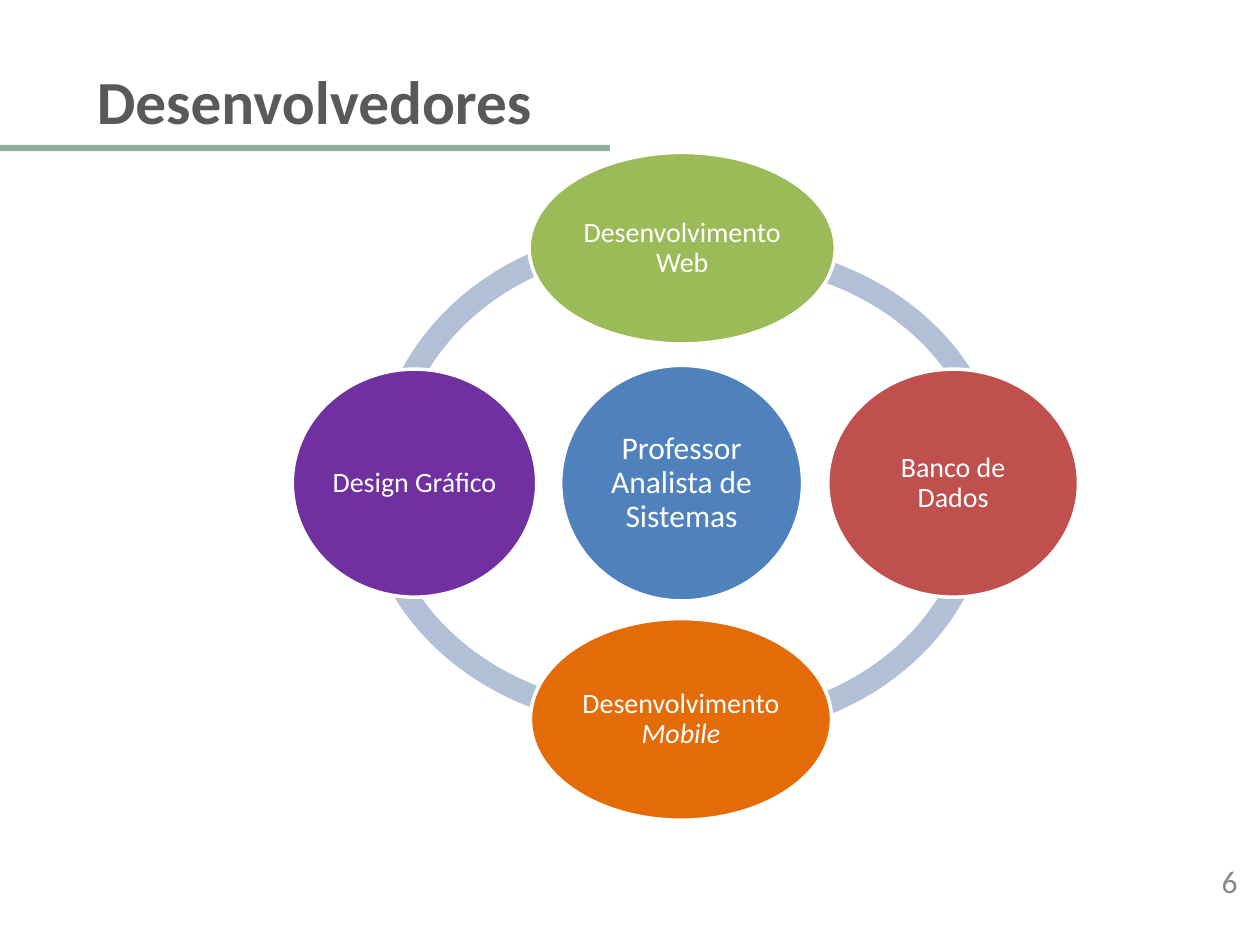
from lxml import etree
from pptx import Presentation
from pptx.dml.color import RGBColor
from pptx.enum.shapes import MSO_SHAPE
from pptx.enum.text import MSO_ANCHOR, PP_ALIGN
from pptx.oxml.ns import qn
from pptx.util import Inches, Pt

RECT, OVAL, ARC = MSO_SHAPE.RECTANGLE, MSO_SHAPE.OVAL, MSO_SHAPE.BLOCK_ARC
MIDDLE = MSO_ANCHOR.MIDDLE
LEFT, CENTER, RIGHT = PP_ALIGN.LEFT, PP_ALIGN.CENTER, PP_ALIGN.RIGHT

FONT = "Calibri"
WHITE = RGBColor(0xFF, 0xFF, 0xFF)
DARK_GRAY = RGBColor(0x59, 0x59, 0x59)
GRAY = RGBColor(0x88, 0x88, 0x88)
DARK_GREEN = RGBColor(0x18, 0x56, 0x3A)
RING = RGBColor(0xB1, 0xC0, 0xD7)
BLUE = RGBColor(0x4F, 0x81, 0xBD)
GREEN = RGBColor(0x9B, 0xBB, 0x59)
RED = RGBColor(0xC0, 0x50, 0x4D)
ORANGE = RGBColor(0xE3, 0x6C, 0x09)
PURPLE = RGBColor(0x70, 0x30, 0xA0)

ARC_THICKNESS = 0.046
ARCS = [
    ((10.26, 11.32, 70.67, 76.04), 179.51, 277.49),
    ((8.97, 13.58, 73.24, 72.83), 82.51, 180.49),
    ((19.07, 12.45, 70.19, 74.91), 359.33, 98.81),
    ((17.79, 13.4, 72.76, 71.7), 261.2, 0.68),
]
ROLES = [
    ((34.13, 31.89, 30.77, 35.28), BLUE, 18, "Professor Analista de Sistemas", ""),
    ((30.13, 0, 38.94, 28.68), GREEN, 16, "Desenvolvimento Web", ""),
    ((68.11, 32.45, 31.89, 34.15), RED, 16, "Banco de Dados", ""),
    ((30.29, 69.81, 38.3, 30.19), ORANGE, 16, "Desenvolvimento ", "Mobile"),
    ((0, 32.45, 31.09, 34.15), PURPLE, 16, "Design Gráfico", ""),
]


def within(box, share):
    """Return the part of a box given by percentages of its width and height."""
    x, y, w, h = box
    left, top, width, height = share
    return (int(x + w * left / 100), int(y + h * top / 100),
            int(w * width / 100), int(h * height / 100))


def add_shape(slide, kind, box, fill, line=None):
    """Add a flat preset shape with an optional outline colour."""
    sp = slide.shapes.add_shape(kind, *box)
    sp.shadow.inherit = False
    sp.fill.solid()
    sp.fill.fore_color.rgb = fill
    if line is None:
        sp.line.fill.background()
    else:
        sp.line.color.rgb = line
        sp.line.width = Pt(2)
    return sp


def write(sp, text, italic_text="", size=18, color=WHITE, bold=False,
          align=LEFT, spacing=1.0, inset=(0.1, 0.05)):
    """Write one paragraph, optionally ending in italics, into a shape."""
    tf = sp.text_frame
    tf.word_wrap = True
    tf.vertical_anchor = MIDDLE
    tf.margin_left = tf.margin_right = Inches(inset[0])
    tf.margin_top = tf.margin_bottom = Inches(inset[1])
    p = tf.paragraphs[0]
    p.alignment = align
    p.line_spacing = spacing
    for part, italic in ((text, False), (italic_text, True)):
        if part:
            r = p.add_run()
            r.text = part
            r.font.name = FONT
            r.font.size = Pt(size)
            r.font.bold = bold
            r.font.italic = italic
            r.font.color.rgb = color


def add_header(slide, box):
    """Place the title above its translucent rule."""
    rule = add_shape(slide, RECT, within(box, (0, 93.42, 66.39, 6.58)), DARK_GREEN)
    rgb = next(rule.fill._xPr.iter(qn("a:srgbClr")))
    etree.SubElement(rgb, qn("a:alpha"), val="49000")
    title = slide.shapes.add_textbox(*within(box, (9.19, 0, 90.81, 93.42)))
    write(title, "Desenvolvedores", size=35, color=DARK_GRAY, bold=True)


def add_cycle(slide, box):
    """Draw the ring of arcs and the role ellipses on it."""
    for share, start, end in ARCS:
        sp = add_shape(slide, ARC, within(box, share), RING)
        sp.adjustments[0] = start * 0.6
        sp.adjustments[1] = end * 0.6
        sp.adjustments[2] = ARC_THICKNESS
    for share, fill, size, text, italic_text in ROLES:
        sp = add_shape(slide, OVAL, within(box, share), fill, WHITE)
        write(sp, text, italic_text, size=size, align=CENTER, spacing=0.9,
              inset=(0.02, 0.02))


def add_page_number(slide, box):
    """Place the page number at the right of its box."""
    write(slide.shapes.add_textbox(*box), "6", color=GRAY, align=RIGHT)


def main():
    """Build and save the slide."""
    prs = Presentation()
    prs.slide_width, prs.slide_height = Inches(10), Inches(7.5)
    slide = prs.slides.add_slide(prs.slide_layouts[6])
    page = (0, 0, prs.slide_width, prs.slide_height)
    add_header(slide, within(page, (0, 5.87, 72.9, 10.13)))
    add_cycle(slide, within(page, (23.2, 16.13, 62.4, 70.67)))
    add_page_number(slide, within(page, (75.9, 90.53, 23.3, 5.33)))
    prs.save("out.pptx")


if __name__ == "__main__":
    main()
